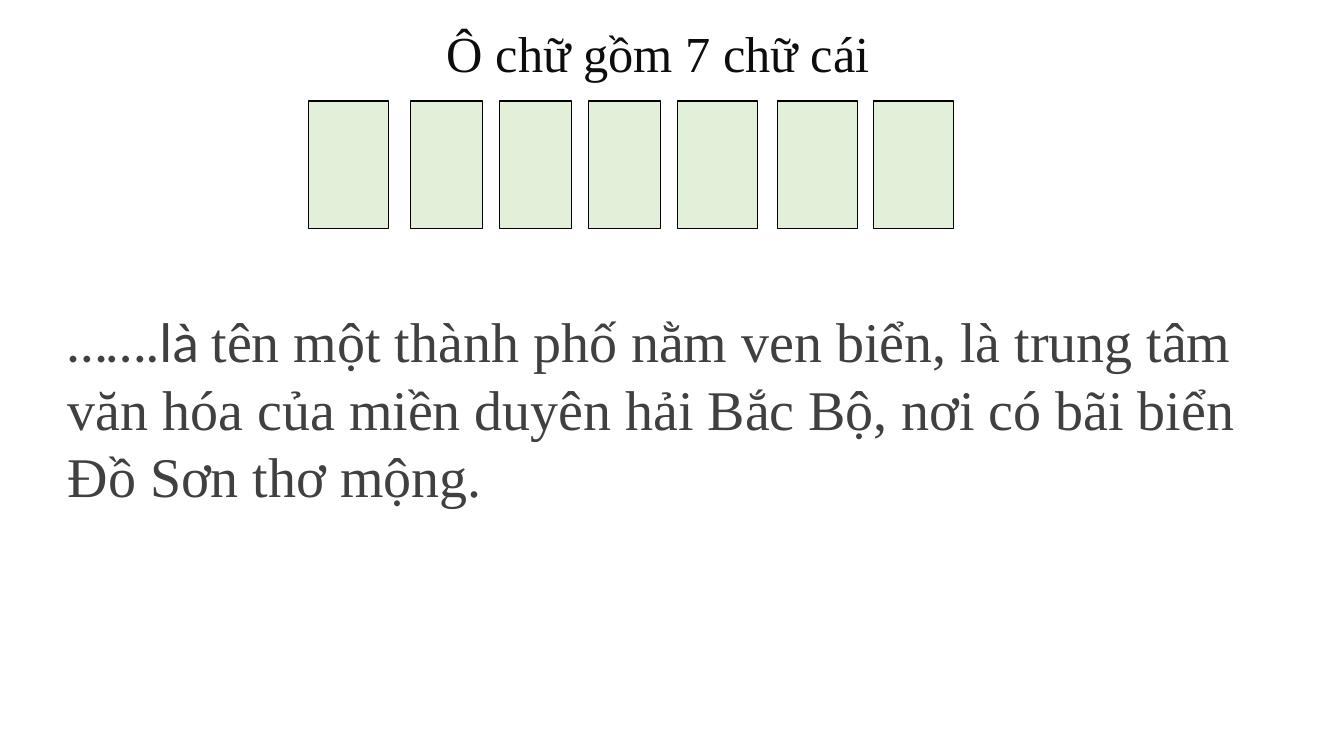
import pptx
import pptx.dml.color
import pptx.enum.shapes
import pptx.util

TITLE = [("Ô chữ gồm 7 chữ cái", "Times New Roman")]
CLUE = [
    ("…….là ", "Calibri"),
    ("tên một thành phố nằm ven biển, là trung tâm văn hóa của miền duyên hải "
     "Bắc Bộ, nơi có bãi biển Đồ Sơn thơ mộng.", "Times New Roman"),
]
# (left, width) of each letter cell, in px
LETTER_CELLS = [(309, 80), (411, 72), (500, 72), (589, 72), (678, 80), (778, 80), (874, 80)]
CELL_TOP, CELL_HEIGHT = 101, 128

COLORS = {"title": "0D0D0D", "clue": "404040", "cell": "E2F0D9", "outline": "000000"}
EMU_PER_PX = 914400 / 100.8


def px(length):
    return pptx.util.Emu(round(length * EMU_PER_PX))


def rgb(name):
    return pptx.dml.color.RGBColor.from_string(COLORS[name])


def add_text(slide, pieces, box, *, size, color, inset_left=10, inset_top=5):
    """Add one wrapped paragraph made of (wording, font) pieces."""
    frame = slide.shapes.add_textbox(*map(px, box)).text_frame
    frame.word_wrap = True
    frame.margin_left = px(inset_left)
    frame.margin_top = px(inset_top)
    for wording, font in pieces:
        run = frame.paragraphs[0].add_run()
        run.text = wording
        run.font.name = font
        run.font.size = pptx.util.Pt(size)
        run.font.color.rgb = rgb(color)


def add_letter_cell(slide, left, width):
    cell = slide.shapes.add_shape(
        pptx.enum.shapes.MSO_SHAPE.RECTANGLE,
        px(left), px(CELL_TOP), px(width), px(CELL_HEIGHT))
    cell.shadow.inherit = False
    cell.fill.solid()
    cell.fill.fore_color.rgb = rgb("cell")
    cell.line.color.rgb = rgb("outline")
    cell.line.width = pptx.util.Pt(0.75)


def main():
    deck = pptx.Presentation()
    deck.slide_width, deck.slide_height = px(1344), px(756)
    slide = deck.slides.add_slide(deck.slide_layouts[6])
    add_text(slide, TITLE, (337, 12, 948, 115), size=36, color="title",
             inset_left=110, inset_top=10)
    for left, width in LETTER_CELLS:
        add_letter_cell(slide, left, width)
    add_text(slide, CLUE, (58, 302, 1202, 214), size=40, color="clue")
    deck.save("out.pptx")


if __name__ == "__main__":
    main()
